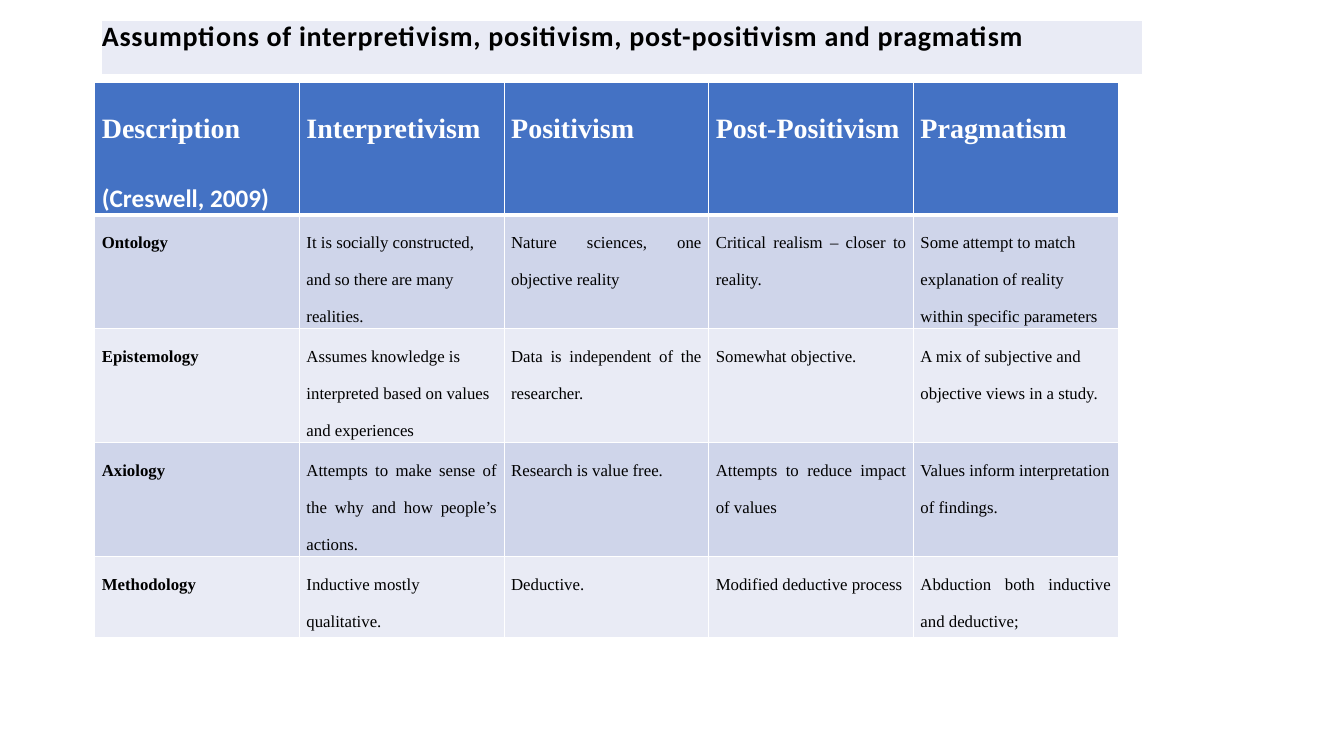
from dataclasses import dataclass

from lxml import etree
from pptx import Presentation
from pptx.dml.color import RGBColor
from pptx.enum.text import PP_ALIGN
from pptx.oxml.ns import qn
from pptx.slide import Slide
from pptx.table import Table, _Cell
from pptx.util import Inches, Pt

LEFT = PP_ALIGN.LEFT
JUSTIFY = PP_ALIGN.JUSTIFY
SERIF = "Times New Roman"
SANS = "Calibri"
COLORS = {
    "white": "FFFFFF",
    "black": "000000",
    "header": "4472C4",
    "dark_band": "CFD5EA",
    "light_band": "E9EBF5",
}


@dataclass
class Line:
    text: str
    size: int = 12
    font: str = SERIF
    color: str = "black"
    bold: bool = False
    align: PP_ALIGN = JUSTIFY


@dataclass
class Assumption:
    name: str
    views: list[str]
    left_columns: tuple[int, ...]
    fill: str
    height: float


TITLE = Line(
    "Assumptions of interpretivism, positivism, post-positivism and pragmatism",
    20, SANS, bold=True,
)
PARADIGMS = ["Description", "Interpretivism", "Positivism", "Post-Positivism", "Pragmatism"]
CITATION = Line("(Creswell, 2009)", 18, SANS, "white", True)
HEADER_HEIGHT = 0.8
COLUMN_WIDTH = 2.03
ASSUMPTIONS = [
    Assumption("Ontology", [
        "It is socially constructed, and so there are many realities.",
        "Nature sciences, one objective reality",
        "Critical realism – closer to reality.",
        "Some attempt to match explanation of reality within specific parameters",
    ], (1, 4), "dark_band", 1.13),
    Assumption("Epistemology", [
        "Assumes knowledge is interpreted based on values and experiences",
        "Data is independent of the researcher.",
        "Somewhat objective.",
        "A mix of subjective and objective views in a study.",
    ], (1, 4), "light_band", 1.13),
    Assumption("Axiology", [
        "Attempts to make sense of the why and how people’s actions.",
        "Research is value free.",
        "Attempts to reduce impact of values",
        "Values inform interpretation of findings.",
    ], (4,), "dark_band", 1.13),
    Assumption("Methodology", [
        "Inductive mostly qualitative.",
        "Deductive.",
        "Modified deductive process",
        "Abduction both inductive and deductive;",
    ], (1,), "light_band", 0.8),
]


def rgb(name: str) -> RGBColor:
    return RGBColor.from_string(COLORS[name])


def set_borders(cell: _Cell, top: int = 1, bottom: int = 1) -> None:
    tc_pr = cell._tc.get_or_add_tcPr()
    for side, width in (("L", 1), ("R", 1), ("T", top), ("B", bottom)):
        ln = etree.SubElement(tc_pr, qn(f"a:ln{side}"), w=str(Pt(width)))
        fill = etree.SubElement(ln, qn("a:solidFill"))
        etree.SubElement(fill, qn("a:srgbClr"), val=COLORS["white"])


def fill_cell(cell: _Cell, lines: list[Line], fill: str, margin: float) -> None:
    cell.fill.solid()
    cell.fill.fore_color.rgb = rgb(fill)
    cell.margin_left = cell.margin_right = Inches(margin)
    cell.margin_top = cell.margin_bottom = 0
    tf = cell.text_frame
    tf.text = "\n".join(line.text for line in lines)
    for p, line in zip(tf.paragraphs, lines):
        p.alignment = line.align
        font = p.runs[0].font
        font.size = Pt(line.size)
        font.name = line.font
        font.bold = line.bold
        font.color.rgb = rgb(line.color)


def add_grid(s: Slide, left: float, top: float, width: float, heights: list[float], columns: int) -> Table:
    frame = s.shapes.add_table(
        len(heights), columns, Inches(left), Inches(top), Inches(width * columns), Inches(sum(heights))
    )
    table = frame.table
    for column in table.columns:
        column.width = Inches(width)
    for row, height in zip(table.rows, heights):
        row.height = Inches(height)
    return table


def add_paradigms(s: Slide) -> None:
    heights = [HEADER_HEIGHT] + [a.height for a in ASSUMPTIONS]
    table = add_grid(s, 0.94, 0.82, COLUMN_WIDTH, heights, len(PARADIGMS))
    for c, paradigm in enumerate(PARADIGMS):
        lines = [Line(paradigm, 20, color="white", bold=True)]
        if c == 0:
            lines.append(CITATION)
        set_borders(table.cell(0, c), bottom=3)
        fill_cell(table.cell(0, c), lines, "header", 0.07)
    for r, assumption in enumerate(ASSUMPTIONS, start=1):
        for c, text in enumerate([assumption.name, *assumption.views]):
            align = LEFT if c in assumption.left_columns else JUSTIFY
            line = Line(text, bold=c == 0, align=align)
            set_borders(table.cell(r, c), top=3 if r == 1 else 1)
            fill_cell(table.cell(r, c), [line], assumption.fill, 0.07)
    for cell in table.iter_cells():
        for p in cell.text_frame.paragraphs:
            p.line_spacing = 2.0
            p.space_before = Pt(6)


def add_title(s: Slide) -> None:
    table = add_grid(s, 1.01, 0.2, 10.32, [0.54], 1)
    table.first_row = False
    cell = table.cell(0, 0)
    set_borders(cell)
    fill_cell(cell, [TITLE], "light_band", 0)
    p = cell.text_frame.paragraphs[0]
    p.space_after = Pt(6)
    p.runs[0]._r.get_or_add_rPr().set("spc", "50")


def main() -> None:
    prs = Presentation()
    prs.slide_width = Inches(13.33)
    prs.slide_height = Inches(7.5)
    s = prs.slides.add_slide(prs.slide_layouts[6])
    add_paradigms(s)
    add_title(s)
    prs.save("out.pptx")


if __name__ == "__main__":
    main()
